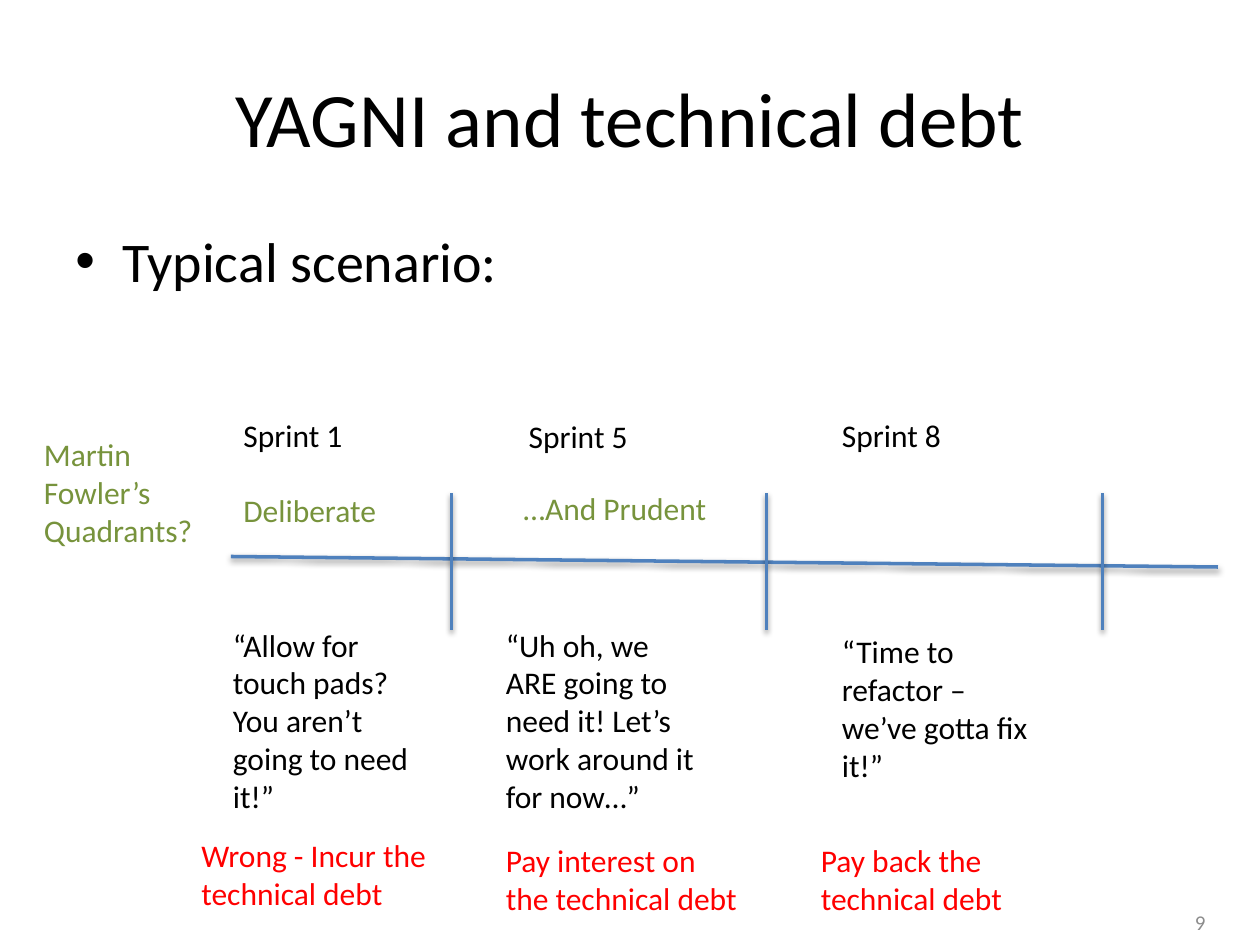
from lxml import etree
from pptx import Presentation
from pptx.dml.color import RGBColor
from pptx.enum.shapes import MSO_CONNECTOR
from pptx.enum.text import MSO_ANCHOR, MSO_AUTO_SIZE, PP_ALIGN
from pptx.oxml import parse_xml
from pptx.oxml.ns import nsdecls, qn
from pptx.util import Pt

STRAIGHT = MSO_CONNECTOR.STRAIGHT
TOP, MIDDLE = MSO_ANCHOR.TOP, MSO_ANCHOR.MIDDLE
LEFT, CENTER, RIGHT = PP_ALIGN.LEFT, PP_ALIGN.CENTER, PP_ALIGN.RIGHT
GROW, FIXED = MSO_AUTO_SIZE.SHAPE_TO_FIT_TEXT, MSO_AUTO_SIZE.NONE

COLOURS = {
    "text": "000000",
    "number": "8C8C8C",
    "line": "4F81BD",
    "debt": "FF0000",
    "quadrant": "77933C",
}
SHADOW = (
    f'<a:effectLst {nsdecls("a")}>'
    '<a:outerShdw blurRad="40000" dist="20000" dir="5400000" rotWithShape="0">'
    '<a:srgbClr val="000000"><a:alpha val="38000"/></a:srgbClr>'
    "</a:outerShdw></a:effectLst>"
)


class SlideWriter:
    """Holds the text style and the page being drawn."""

    font_name = "Calibri"

    def __init__(self, page):
        self.page = page

    def text(self, words, left, top, width, height, colour="text", size=18,
             align=LEFT, anchor=TOP, wrap=True, fit=GROW, bullet_indent=0):
        box = self.page.shapes.add_textbox(Pt(left), Pt(top), Pt(width), Pt(height))
        frame = box.text_frame
        settings = {"word_wrap": wrap, "auto_size": fit, "vertical_anchor": anchor}
        for name, value in settings.items():
            setattr(frame, name, value)
        para = frame.paragraphs[0]
        para.alignment = align
        if bullet_indent:
            self.bullet(para, bullet_indent)
        span = para.add_run()
        span.text = words
        formats = {"name": self.font_name, "size": Pt(size)}
        for name, value in formats.items():
            setattr(span.font, name, value)
        span.font.color.rgb = RGBColor.from_string(COLOURS[colour])

    def bullet(self, para, indent):
        properties = para._p.get_or_add_pPr()
        properties.set("marL", str(Pt(indent)))
        properties.set("indent", str(-Pt(indent)))
        etree.SubElement(properties, qn("a:buFont")).set("typeface", "Arial")
        etree.SubElement(properties, qn("a:buChar")).set("char", "•")

    def line(self, x1, y1, x2, y2):
        connector = self.page.shapes.add_connector(
            STRAIGHT, Pt(x1), Pt(y1), Pt(x2), Pt(y2))
        connector.line.color.rgb = RGBColor.from_string(COLOURS["line"])
        connector.line.width = Pt(2)
        connector._element.spPr.append(parse_xml(SHADOW))


def main():
    deck = Presentation()
    deck.slide_width, deck.slide_height = Pt(720), Pt(540)
    writer = SlideWriter(deck.slides.add_slide(deck.slide_layouts[6]))

    # Page number, title and opening bullet
    writer.text("9", 528, 512.5, 168, 28.75, "number", 12, RIGHT, MIDDLE, fit=FIXED)
    writer.text("YAGNI and technical debt", 36, 21.6, 648, 90, size=44,
                align=CENTER, anchor=MIDDLE, fit=FIXED)
    writer.text("Typical scenario:", 36, 126, 648, 356.4, size=32, fit=FIXED,
                bullet_indent=27)

    # Timeline with a tick at the end of each sprint
    writer.line(132, 318, 696, 324)
    for tick in (258, 438, 630):
        writer.line(tick, 282, tick, 360)

    # Sprint names above the timeline
    for words, left, top in (
        ("Sprint 1", 132, 234),
        ("Sprint 5", 295, 234.7),
        ("Sprint 8", 474, 234),
    ):
        writer.text(words, left, top, 72, 29, wrap=False)

    # What the team says in each sprint
    for words, left, top, height in (
        ("“Allow for touch pads? You aren’t going to need it!”", 126, 354, 116.6),
        ("“Uh oh, we ARE going to need it! Let’s work around it for now…”",
         282, 354, 116.6),
        ("“Time to refactor – we’ve gotta fix it!”", 474, 357.8, 94.5),
    ):
        writer.text(words, left, top, 126, height)

    # Effect on the technical debt
    for words, left, top in (
        ("Wrong - Incur the technical debt", 108, 474),
        ("Pay interest on the technical debt", 282, 477),
        ("Pay back the technical debt", 462, 477),
    ):
        writer.text(words, left, top, 150, 51, "debt")

    # Debt quadrants
    for words, left, top, width in (
        ("Deliberate", 132, 277, 92),
        ("…And Prudent", 292, 276, 122),
    ):
        writer.text(words, left, top, width, 29, "quadrant", wrap=False)
    writer.text("Martin Fowler’s Quadrants?", 18, 245.3, 114, 72.7, "quadrant")

    deck.save("out.pptx")


if __name__ == "__main__":
    main()
